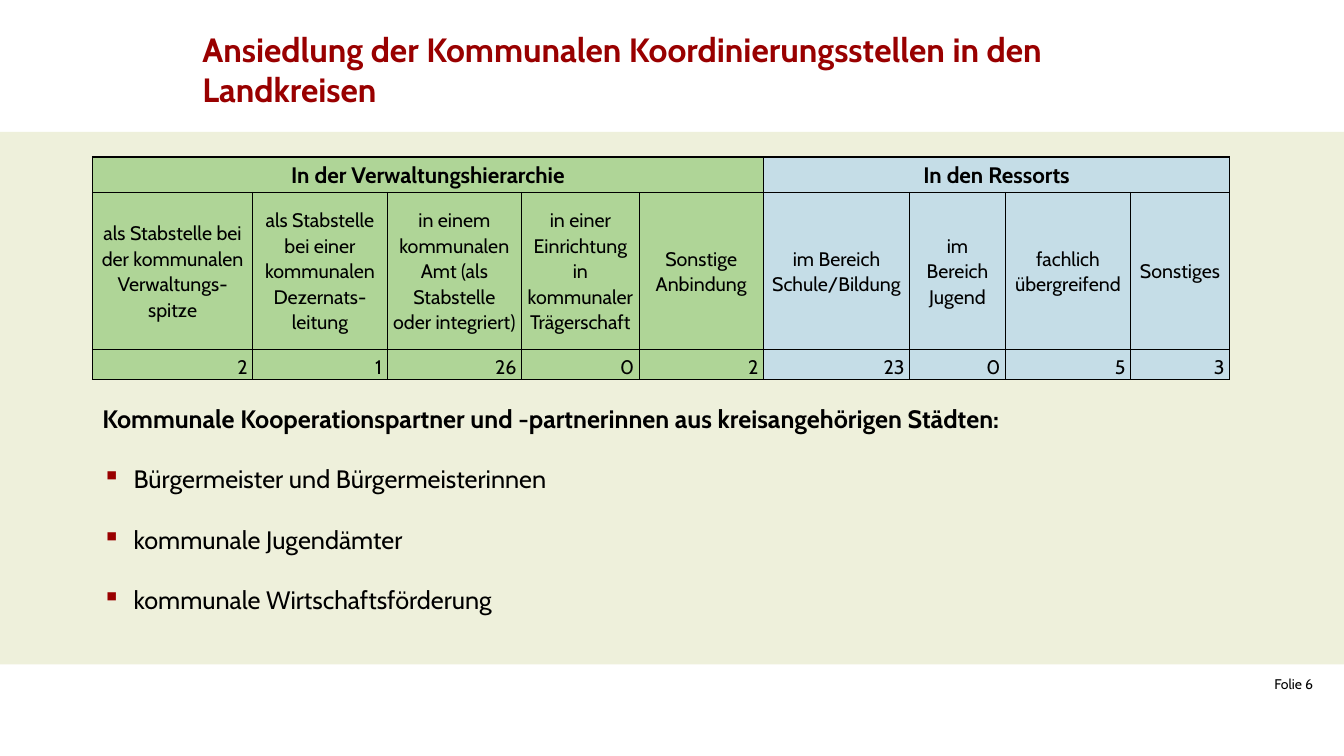
from lxml import etree
from pptx import Presentation, util as u
from pptx.dml.color import RGBColor
from pptx.enum import shapes, text
from pptx.oxml import ns

BLACK = RGBColor(0x00, 0x00, 0x00)
RED = RGBColor(0x99, 0x00, 0x00)
CREAM = RGBColor(0xEE, 0xF0, 0xDB)
GREEN = RGBColor(0xAF, 0xD5, 0x97)
BLUE = RGBColor(0xC5, 0xDD, 0xE7)

COLS, ROWS = 160, 90
LEFT, WIDE = 11, 135.4
MID, LOW = text.MSO_ANCHOR.MIDDLE, text.MSO_ANCHOR.BOTTOM
ALIGN = text.PP_ALIGN

WIDTHS = [19.1, 16, 16, 14, 14.8, 17.4, 11.4, 14.9, 11.8]
HEIGHTS = [4.2, 18.7, 3.6]
GROUPS = [("In der Verwaltungshierarchie", GREEN, 5), ("In den Ressorts", BLUE, 4)]
PLACES = [
    ("als Stabstelle bei der kommunalen Verwaltungs-spitze", 2),
    ("als Stabstelle bei einer kommunalen Dezernats-leitung", 1),
    ("in einem kommunalen Amt (als Stabstelle oder integriert)", 26),
    ("in einer Einrichtung in kommunaler Trägerschaft", 0),
    ("Sonstige Anbindung", 2),
    ("im Bereich Schule/Bildung", 23),
    ("im Bereich Jugend", 0),
    ("fachlich übergreifend", 5),
    ("Sonstiges", 3),
]
PARTNERS = [
    "Bürgermeister und Bürgermeisterinnen",
    "kommunale Jugendämter",
    "kommunale Wirtschaftsförderung",
]


class Page:
    """One slide, measured in columns and rows of a square grid."""

    font = "Cabin"

    def __init__(self, deck):
        self.slide = deck.slides.add_slide(deck.slide_layouts[6])
        self.unit_x = deck.slide_width / COLS
        self.unit_y = deck.slide_height / ROWS

    def span(self, col, row, wide, high):
        """Turn grid places into lengths."""
        return (u.Emu(round(col * self.unit_x)), u.Emu(round(row * self.unit_y)),
                u.Emu(round(wide * self.unit_x)), u.Emu(round(high * self.unit_y)))

    def band(self, place, fill):
        box = self.slide.shapes.add_shape(shapes.MSO_SHAPE.RECTANGLE, *self.span(*place))
        box.shadow.inherit = False
        box.fill.solid()
        box.fill.fore_color.rgb = fill
        box.line.fill.background()

    def frame(self, place, anchor=text.MSO_ANCHOR.TOP):
        frame = self.slide.shapes.add_textbox(*self.span(*place)).text_frame
        frame.word_wrap = True
        frame.vertical_anchor = anchor
        return frame

    def words(self, para, words, size, color=BLACK, bold=False, align=ALIGN.LEFT):
        para.alignment = align
        run = para.add_run()
        run.text = words
        run.font.name = self.font
        run.font.size = u.Pt(size)
        run.font.bold = bold
        run.font.color.rgb = color

    def bullet(self, para, mark, color):
        props = para._p.get_or_add_pPr()
        indent = u.Inches(0.31)
        props.set("marL", str(indent))
        props.set("indent", str(-indent))
        tint = etree.SubElement(props, ns.qn("a:buClr"))
        etree.SubElement(tint, ns.qn("a:srgbClr"), val=str(color))
        etree.SubElement(props, ns.qn("a:buChar"), char=mark)

    def table(self, col, row, widths, heights):
        place = self.span(col, row, sum(widths), sum(heights))
        grid = self.slide.shapes.add_table(len(heights), len(widths), *place).table
        for part, wide in zip(grid.columns, widths):
            part.width = u.Emu(round(wide * self.unit_x))
        for part, high in zip(grid.rows, heights):
            part.height = u.Emu(round(high * self.unit_y))
        return grid

    def cell(self, cell, fill, anchor=MID):
        """Give a table cell its edges, fill and margins."""
        props = cell._tc.get_or_add_tcPr()
        for side in "LRTB":
            line = etree.SubElement(props, ns.qn(f"a:ln{side}"), w=str(u.Pt(1)))
            solid = etree.SubElement(line, ns.qn("a:solidFill"))
            etree.SubElement(solid, ns.qn("a:srgbClr"), val=str(BLACK))
        cell.fill.solid()
        cell.fill.fore_color.rgb = fill
        cell.vertical_anchor = anchor
        cell.margin_left = cell.margin_right = u.Inches(0.05)
        cell.margin_top = cell.margin_bottom = 0

    def label(self, cell, words, size, align=ALIGN.CENTER, bold=False):
        para = cell.text_frame.paragraphs[0]
        para.line_spacing = 1.07
        self.words(para, words, size, bold=bold, align=align)


def fill_table(page):
    grid = page.table(LEFT, 18.7, WIDTHS, HEIGHTS)
    start = 0
    for head, color, count in GROUPS:
        stop = start + count
        for col in range(start, stop):
            place, number = PLACES[col]
            page.cell(grid.cell(0, col), color)
            page.cell(grid.cell(1, col), color)
            page.cell(grid.cell(2, col), color, LOW)
            page.label(grid.cell(1, col), place, 14)
            page.label(grid.cell(2, col), str(number), 14, ALIGN.RIGHT)
        grid.cell(0, start).merge(grid.cell(0, stop - 1))
        page.label(grid.cell(0, start), head, 16, bold=True)
        start = stop


def main():
    deck = Presentation()
    deck.slide_width, deck.slide_height = u.Inches(13.33), u.Inches(7.5)
    page = Page(deck)

    page.band((0, 15.7, COLS, 63.4), CREAM)
    folio = page.frame((120.1, 79, 37.4, 4.8), MID)
    page.words(folio.paragraphs[0], "Folie 6", 10, align=ALIGN.RIGHT)
    title = page.frame((22.9, 2.8, 113.4, 10.9), MID)
    page.words(title.paragraphs[0],
               "Ansiedlung der Kommunalen Koordinierungsstellen in den Landkreisen",
               24, RED, True)

    fill_table(page)

    body = page.frame((LEFT, 47.4, WIDE, 26.6))
    page.words(body.paragraphs[0],
               "Kommunale Kooperationspartner und -partnerinnen aus kreisangehörigen Städten:",
               18, bold=True)
    for partner in PARTNERS:
        para = body.add_paragraph()
        para.space_before = u.Pt(21.6)
        page.bullet(para, "▪", RED)
        page.words(para, partner, 18)

    deck.save("out.pptx")


if __name__ == "__main__":
    main()
